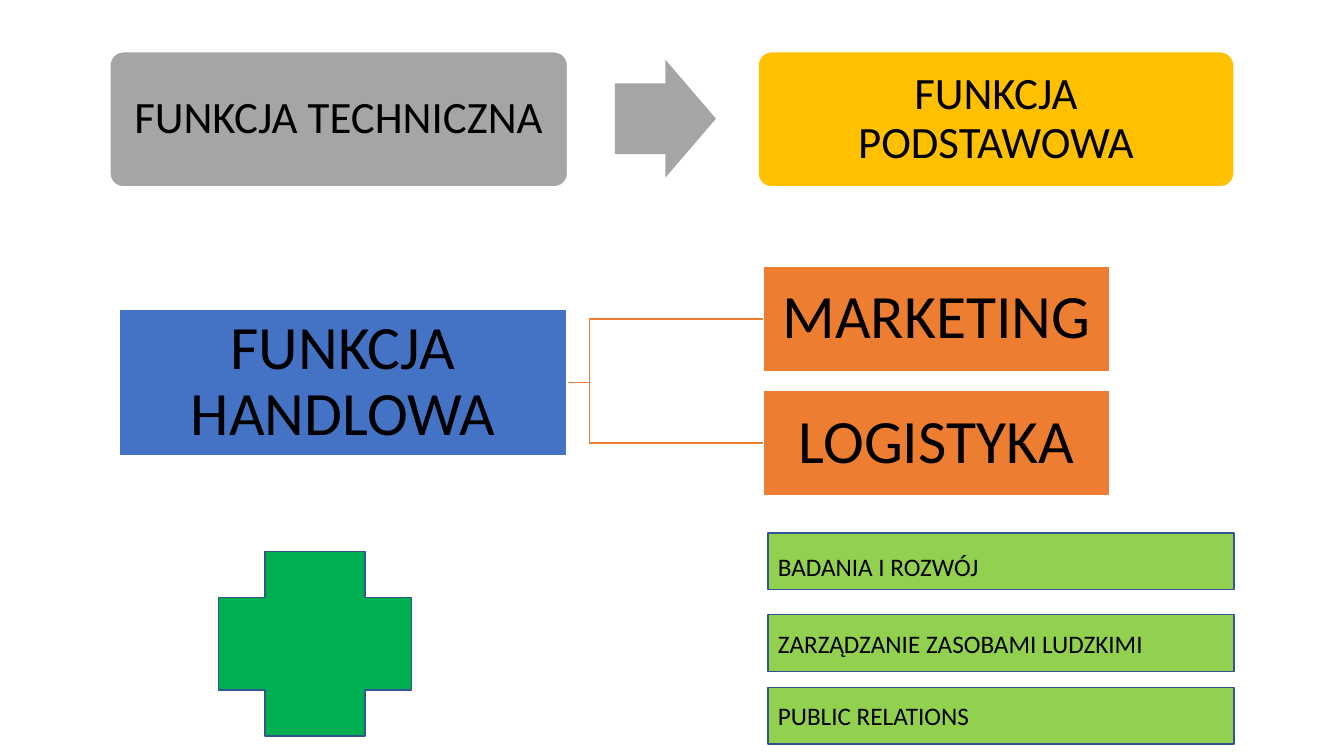
from lxml import etree
from pptx import Presentation
from pptx.dml.color import RGBColor
from pptx.enum import shapes, text
from pptx.util import Pt

BLACK = RGBColor(0x00, 0x00, 0x00)
WHITE = RGBColor(0xFF, 0xFF, 0xFF)
GREY = RGBColor(0xA5, 0xA5, 0xA5)
GOLD = RGBColor(0xFF, 0xC0, 0x00)
BLUE = RGBColor(0x44, 0x72, 0xC4)
ORANGE = RGBColor(0xED, 0x7D, 0x31)
GREEN = RGBColor(0x00, 0xB0, 0x50)
LIME = RGBColor(0x92, 0xD0, 0x50)
NAVY = RGBColor(0x32, 0x54, 0x91)

KIND = shapes.MSO_SHAPE
FONT = "Calibri"


def apply(target, values):
    for name, value in values.items():
        setattr(target, name, value)


def set_line(shape, colour):
    shape.line.color.rgb = colour
    shape.line.width = Pt(1)


def add_block(page, kind, place, fill, line=None, adjustments=()):
    box = page.shapes.add_shape(kind, *map(Pt, place))
    box.shadow.inherit = False
    box.fill.solid()
    box.fill.fore_color.rgb = fill
    if line is None:
        box.line.fill.background()
    else:
        set_line(box, line)
    for index, value in enumerate(adjustments):
        box.adjustments[index] = value
    return box


def write(box, words, size, margins, align=text.PP_ALIGN.CENTER, spacing=0.9):
    sides = ("margin_left", "margin_top", "margin_right", "margin_bottom")
    frame = box.text_frame
    apply(frame, {"word_wrap": True, "vertical_anchor": text.MSO_ANCHOR.MIDDLE})
    apply(frame, dict(zip(sides, map(Pt, margins))))
    para = frame.paragraphs[0]
    apply(para, {"alignment": align, "line_spacing": spacing})
    span = para.add_run()
    span.text = words
    apply(span.font, {"name": FONT, "size": Pt(size)})
    span.font.color.rgb = BLACK


def add_function(page, words, left, width, fill):
    box = add_block(page, KIND.ROUNDED_RECTANGLE, (left, 37, width, 96.5),
                    fill, WHITE, [0.1])
    write(box, words, 32, [9.6] * 4)


def add_node(page, words, place, fill):
    box = add_block(page, KIND.RECTANGLE, place, fill, WHITE)
    write(box, words, 44, [2.2] * 4)


def add_branch(page, start, bend, end):
    builder = page.shapes.build_freeform(Pt(start[0]), Pt(start[1]))
    corners = [(bend, start[1]), (bend, end[1]), end]
    builder.add_line_segments([(Pt(x), Pt(y)) for x, y in corners], close=False)
    branch = builder.convert_to_shape()
    branch.shadow.inherit = False
    branch.fill.background()
    set_line(branch, ORANGE)


def add_bar(page, words, top, top_margin):
    bar = add_block(page, KIND.RECTANGLE, (548.6, top, 332.8, 40.5), LIME, NAVY)
    write(bar, words, 18, (7.2, top_margin, 7.2, 3.6), text.PP_ALIGN.LEFT, 1.0)


def main():
    deck = Presentation()
    deck.slide_width, deck.slide_height = Pt(960), Pt(540)
    page = deck.slides.add_slide(deck.slide_layouts[6])

    add_function(page, "FUNKCJA TECHNICZNA", 78.5, 327, GREY)
    add_block(page, KIND.RIGHT_ARROW, (439.2, 42.7, 72.2, 84.2), GREY,
              adjustments=(0.6, 0.5))
    add_function(page, "FUNKCJA PODSTAWOWA", 541.5, 340, GOLD)

    trade_left, trade_top, trade_width, trade_height = 85, 221, 320, 104.5
    centre = (trade_left + trade_width / 2, trade_top + trade_height / 2)
    branch_left, branch_height = 545.5, 75
    branches = [("MARKETING", 190.3), ("LOGISTYKA", 279)]
    for _, top in branches:
        add_branch(page, centre, 421.3, (branch_left, top + branch_height / 2))
    add_node(page, "FUNKCJA HANDLOWA",
             (trade_left, trade_top, trade_width, trade_height), BLUE)
    for words, top in branches:
        add_node(page, words, (branch_left, top, 247, branch_height), ORANGE)

    add_block(page, KIND.CROSS, (156.2, 393.8, 137.6, 132), GREEN, NAVY)
    bars = [("BADANIA I ROZWÓJ", 380.8, 10.8),
            ("ZARZĄDZANIE ZASOBAMI LUDZKIMI", 439, 3.6),
            ("PUBLIC RELATIONS", 491, 3.6)]
    for words, top, top_margin in bars:
        add_bar(page, words, top, top_margin)

    deck.save("out.pptx")


if __name__ == "__main__":
    main()
